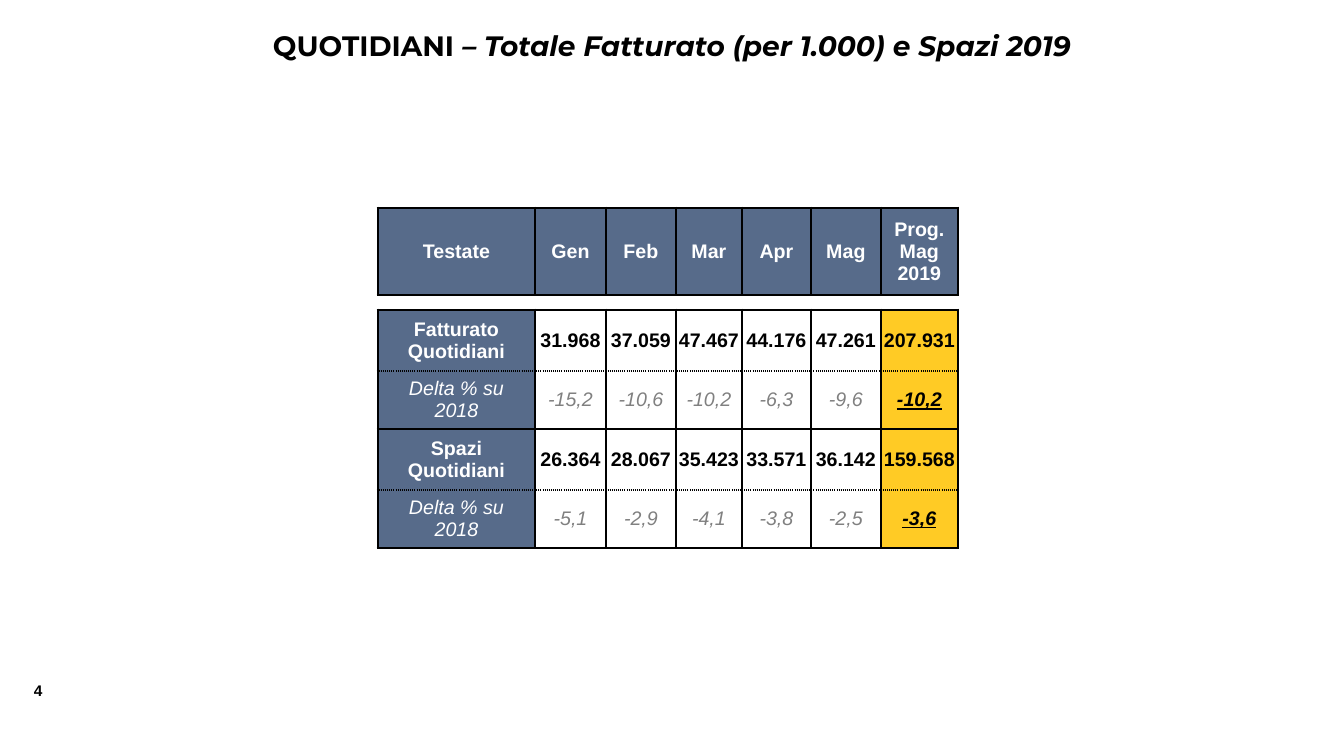
import pptx
import pptx.util
import pptx.dml.color
import pptx.enum.text
import pptx.oxml.ns
from lxml import etree

TITLE = ("QUOTIDIANI ", "– Totale Fatturato (per 1.000) e Spazi 2019")
PAGE = "4"
ROWS = [
    ("header", 87, ["Testate", "Gen", "Feb", "Mar", "Apr", "Mag", "Prog.Mag\n2019"]),
    ("gap", 15, [""] * 7),
    ("value", 61, ["Fatturato Quotidiani", "31.968", "37.059", "47.467", "44.176", "47.261", "207.931"]),
    ("delta", 58, ["Delta % su 2018", "-15,2", "-10,6", "-10,2", "-6,3", "-9,6", "-10,2"]),
    ("value", 61, ["Spazi Quotidiani", "26.364", "28.067", "35.423", "33.571", "36.142", "159.568"]),
    ("delta", 58, ["Delta % su 2018", "-5,1", "-2,9", "-4,1", "-3,8", "-2,5", "-3,6"]),
]
COL_WIDTHS = [157, 71, 70, 66, 69, 70, 77]
COLORS = {"black": "000000", "white": "FFFFFF", "blue": "576B8A", "yellow": "FFCB25", "gray": "808080"}
THICK, THIN, DOTTED, NONE = (2.25, "solid"), (1, "solid"), (1, "sysDot"), None
EDGES = [THICK, THICK, THICK, DOTTED, THIN, DOTTED, THICK]
SCALE = 12192000 / 1344


def px(n):
    return round(n * SCALE)


def write(p, text, size=14, font="Arial", color="black", bold=False, italic=False, underline=False):
    p.alignment = pptx.enum.text.PP_ALIGN.CENTER
    r = p.add_run()
    r.text = text
    f = r.font
    f.name, f.size = font, pptx.util.Pt(size)
    f.bold, f.italic, f.underline = bold, italic, underline
    f.color.rgb = pptx.dml.color.RGBColor.from_string(COLORS[color])


def set_margins(box, x, y):
    box.margin_left = box.margin_right = px(x)
    box.margin_top = box.margin_bottom = px(y)


def set_border(cell, side, line):
    qn = pptx.oxml.ns.qn
    ln = etree.SubElement(cell._tc.get_or_add_tcPr(), qn("a:ln" + side))
    if line is NONE:
        etree.SubElement(ln, qn("a:noFill"))
        return
    width, dash = line
    ln.set("w", str(pptx.util.Pt(width)))
    fill = etree.SubElement(ln, qn("a:solidFill"))
    etree.SubElement(fill, qn("a:srgbClr"), val=COLORS["black"])
    etree.SubElement(ln, qn("a:prstDash"), val=dash)


def cell_style(kind, col):
    label, total = col == 0, col == len(COL_WIDTHS) - 1
    if kind == "header":
        return "blue", dict(color="white", bold=True)
    delta = kind == "delta"
    if label:
        return "blue", dict(color="white", bold=not delta, italic=delta)
    if total:
        return "yellow", dict(bold=True, italic=delta, underline=delta)
    return None, dict(color="gray" if delta else "black", bold=not delta, italic=delta)


def fill_cell(cell, kind, row, col, text):
    side = NONE if kind == "gap" else THICK
    for name, line in zip("LRTB", (side, side, EDGES[row], EDGES[row + 1])):
        set_border(cell, name, line)
    cell.vertical_anchor = pptx.enum.text.MSO_ANCHOR.MIDDLE
    if kind == "gap":
        set_margins(cell, 0, 0)
        cell.fill.background()
        p = cell.text_frame.paragraphs[0]
        etree.SubElement(p._p, pptx.oxml.ns.qn("a:endParaRPr"), sz="400")
        return
    if kind == "header" or col == 0:
        set_margins(cell, 10, 5)
    else:
        set_margins(cell, 0, 0)
    fill, style = cell_style(kind, col)
    if fill:
        cell.fill.solid()
        cell.fill.fore_color.rgb = pptx.dml.color.RGBColor.from_string(COLORS[fill])
    else:
        cell.fill.background()
    tf = cell.text_frame
    for i, line in enumerate(text.split("\n")):
        write(tf.add_paragraph() if i else tf.paragraphs[0], line, **style)


def main():
    prs = pptx.Presentation()
    prs.slide_width, prs.slide_height = px(1344), px(756)
    s = prs.slides.add_slide(prs.slide_layouts[5])

    sp = s.shapes.title
    sp.left, sp.top, sp.width, sp.height = map(px, (168, 23, 1008, 44))
    tf = sp.text_frame
    tf.vertical_anchor = pptx.enum.text.MSO_ANCHOR.MIDDLE
    set_margins(tf, 10, 5)
    for text, italic in zip(TITLE, (False, True)):
        write(tf.paragraphs[0], text, size=20, font="Montserrat", bold=True, italic=italic)

    heights = [height for _, height, _ in ROWS]
    tb = s.shapes.add_table(len(ROWS), len(COL_WIDTHS), px(378), px(208),
                            px(sum(COL_WIDTHS)), px(sum(heights))).table
    tb.first_row = tb.horz_banding = False
    for column, width in zip(tb.columns, COL_WIDTHS):
        column.width = px(width)
    for row, (kind, height, texts) in enumerate(ROWS):
        tb.rows[row].height = px(height)
        for col, text in enumerate(texts):
            fill_cell(tb.cell(row, col), kind, row, col, text)

    sp = s.shapes.add_textbox(*map(px, (24, 676, 28, 29)))
    sp.text_frame.word_wrap = False
    write(sp.text_frame.paragraphs[0], PAGE, size=11, bold=True)

    prs.save("out.pptx")


if __name__ == "__main__":
    main()
